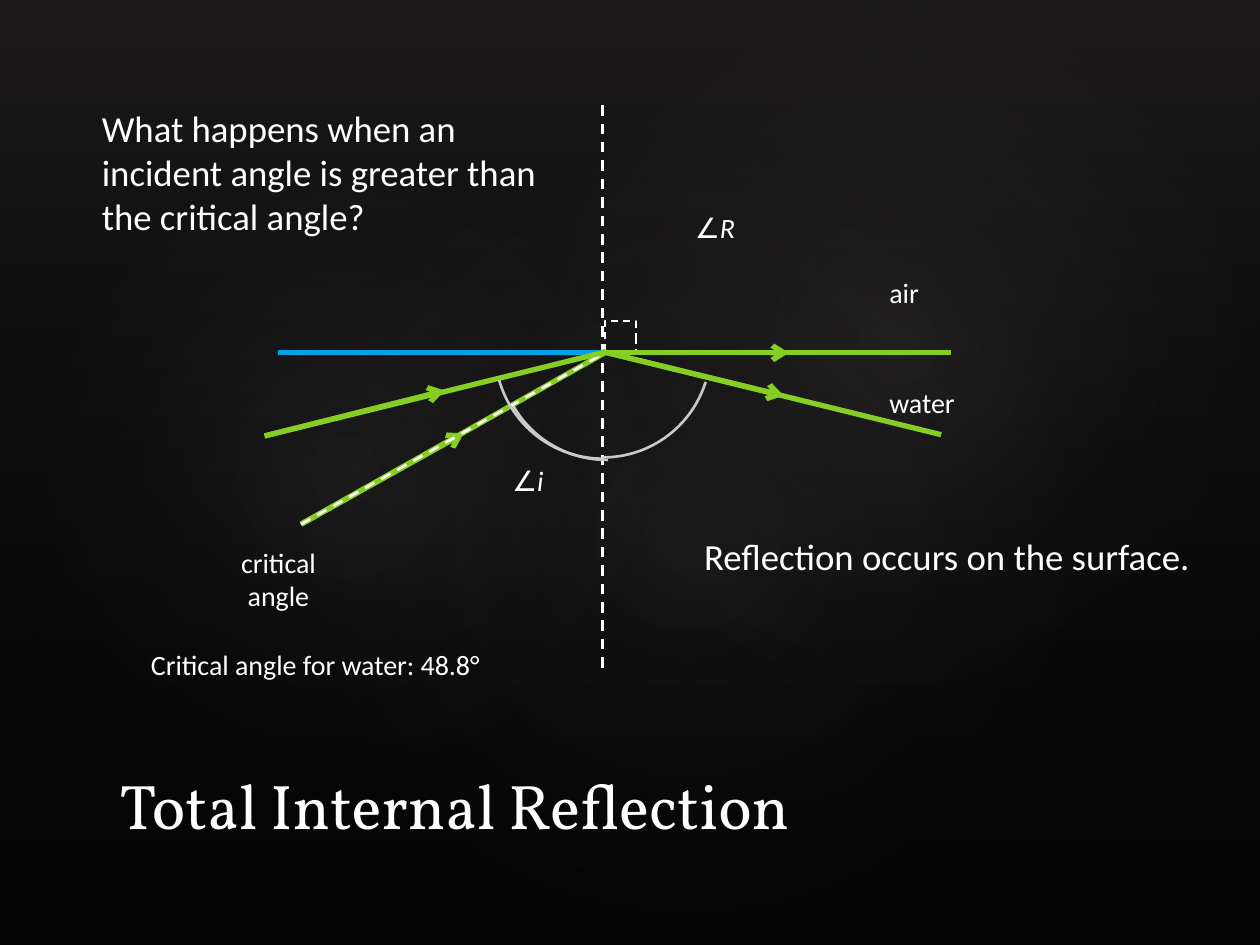
from typing import NamedTuple

from lxml.etree import SubElement
from pptx import Presentation
from pptx.dml.color import RGBColor
from pptx.enum.dml import MSO_LINE
from pptx.enum.shapes import MSO_CONNECTOR, MSO_SHAPE
from pptx.enum.text import MSO_ANCHOR, MSO_AUTO_SIZE, PP_ALIGN
from pptx.oxml.ns import qn
from pptx.util import Inches, Pt

COLUMNS, ROWS = 100, 75
CELL = Inches(0.1)
COLORS = {"back": "000000", "text": "FFFFFF", "surface": "00A2E6", "ray": "86CE24",
          "arc": "C9C9C9", "veil": "4B4545", "glow": "BFB9B9", "fade": "282828"}


class Stop(NamedTuple):
    percent: int
    color: str
    opacity: int


class Glow(NamedTuple):
    frame: tuple[float, float, float, float]
    rotation: float
    opacity: int


class Label(NamedTuple):
    frame: tuple[float, float, float, float]
    spans: tuple[str, ...]  # the second span is italic
    size: int = 16
    font: str = "Calibri"
    align: PP_ALIGN = PP_ALIGN.LEFT
    wrap: bool = True
    anchor: MSO_ANCHOR = MSO_ANCHOR.TOP
    fit: MSO_AUTO_SIZE = MSO_AUTO_SIZE.SHAPE_TO_FIT_TEXT


class Ray(NamedTuple):
    start: tuple[float, float]
    arrow: tuple[float, float]
    end: tuple[float, float]


class Arc(NamedTuple):
    left: float
    top: float
    angles: tuple[float, float]


GLOWS = [
    Glow((15, 11.4, 79.2, 62.4), 328.7, 7),
    Glow((-3, 12.8, 60.6, 49), 294.3, 8),
    Glow((35.8, 1.3, 70.9, 52), 328.7, 8),
]
CENTER = PP_ALIGN.CENTER
LABELS = [
    Label((8.5, 60.3, 82.5, 7), ("Total Internal Reflection",), 36, "Vollkorn",
          anchor=MSO_ANCHOR.BOTTOM, fit=MSO_AUTO_SIZE.NONE),
    Label((69.6, 30.1, 9.4, 3.7), ("water",)),
    Label((69.6, 21.4, 4.4, 3.7), ("air",), wrap=False),
    Label((53.6, 16.2, 6.3, 3.7), ("∠", "R"), align=CENTER),
    Label((39.3, 36.3, 5.2, 3.7), ("∠", "i"), align=CENTER, wrap=False),
    Label((7.1, 7.9, 37.4, 11.6),
          ("What happens when an incident angle is greater than the critical angle?",), 21),
    Label((17.4, 42.8, 9.4, 6.4), ("critical angle",), align=CENTER),
    Label((54.9, 41.9, 41.1, 4.5), ("Reflection occurs on the surface.",), 21, wrap=False),
    Label((11, 50.9, 28.6, 3.7), ("Critical angle for water: 48.8°",), wrap=False),
]
ORIGIN = (47.8, 28)
REFRACTED = Ray(ORIGIN, (62.6, 28), (75.5, 28))
CRITICAL = Ray((23.9, 41.6), (36.8, 34.4), (48, 28))
INCIDENT = Ray((21, 34.6), (35.3, 31), ORIGIN)
REFLECTED = Ray((47.8, 27.9), (62.2, 31.4), (74.7, 34.5))
ARC_SIZE = 17.1
CRITICAL_ARC = Arc(39.6, 19.4, (107.64, 144.11))
INCIDENT_ARC = Arc(39.3, 19.3, (107.64, 152.6))
REFLECTED_ARC = Arc(39.3, 19.2, (64.46, 107.83))


def rgb(name: str) -> RGBColor:
    return RGBColor.from_string(COLORS[name])


def cells(values) -> list[int]:
    return [round(value * CELL) for value in values]


def style_line(line, color: str, width: float, dashed: bool = False) -> None:
    line.color.rgb = rgb(color)
    line.width = Pt(width)
    if dashed:
        line.dash_style = MSO_LINE.DASH


def fill_gradient(shape, stops: list[Stop], radial: bool) -> None:
    """Fill with translucent stops, which need direct XML."""
    shape.fill.gradient()
    gradient = shape.element.spPr.find(qn("a:gradFill"))
    for child in list(gradient):
        gradient.remove(child)
    stop_list = SubElement(gradient, qn("a:gsLst"))
    for stop in stops:
        mark = SubElement(stop_list, qn("a:gs"), pos=str(stop.percent * 1000))
        color = SubElement(mark, qn("a:srgbClr"), val=COLORS[stop.color])
        SubElement(color, qn("a:alpha"), val=str(stop.opacity * 1000))
    if radial:
        shade = SubElement(gradient, qn("a:path"), path="circle")
        SubElement(shade, qn("a:fillToRect"), l="50000", t="50000", r="50000", b="50000")
    else:
        SubElement(gradient, qn("a:lin"), ang="5400000", scaled="0")


def add_shade(page, kind, frame, rotation: float, stops: list[Stop], radial: bool) -> None:
    shape = page.shapes.add_shape(kind, *cells(frame))
    shape.shadow.inherit = False
    shape.rotation = rotation
    shape.line.fill.background()
    fill_gradient(shape, stops, radial)


def add_outline(page, kind, frame, color: str, width: float, dashed: bool = False):
    """Add an unfilled shape turned a quarter to the left."""
    shape = page.shapes.add_shape(kind, *cells(frame))
    shape.shadow.inherit = False
    shape.rotation = 270
    shape.fill.background()
    style_line(shape.line, color, width, dashed)
    return shape


def add_arc(page, arc: Arc) -> None:
    frame = (arc.left, arc.top, ARC_SIZE, ARC_SIZE)
    shape = add_outline(page, MSO_SHAPE.ARC, frame, "arc", 1.5)
    for index, angle in enumerate(arc.angles):
        shape.adjustments[index] = angle


def add_line(page, start, end, color: str, width: float, dashed: bool = False,
             arrow: bool = False) -> None:
    line = page.shapes.add_connector(MSO_CONNECTOR.STRAIGHT, *cells(start + end))
    style_line(line.line, color, width, dashed)
    if arrow:
        SubElement(line.line._get_or_add_ln(), qn("a:tailEnd"), type="arrow")
    SubElement(line.element.spPr, qn("a:effectLst"))


def add_ray(page, ray: Ray) -> None:
    add_line(page, ray.start, ray.end, "ray", 3)
    add_line(page, ray.start, ray.arrow, "ray", 3, arrow=True)


def add_label(page, label: Label) -> None:
    box = page.shapes.add_textbox(*cells(label.frame))
    settings = {"word_wrap": label.wrap, "auto_size": label.fit,
                "vertical_anchor": label.anchor}
    for name, value in settings.items():
        setattr(box.text_frame, name, value)
    para = box.text_frame.paragraphs[0]
    para.alignment = label.align
    for index, text in enumerate(label.spans):
        span = para.add_run()
        span.text = text
        span.font.color.rgb = rgb("text")
        formats = {"size": Pt(label.size), "name": label.font, "italic": index == 1}
        for name, value in formats.items():
            setattr(span.font, name, value)


def main() -> None:
    deck = Presentation()
    deck.slide_width, deck.slide_height = cells((COLUMNS, ROWS))
    page = deck.slides.add_slide(deck.slide_layouts[6])
    page.background.fill.solid()
    page.background.fill.fore_color.rgb = rgb("back")

    add_shade(page, MSO_SHAPE.RECTANGLE, (0, 0, COLUMNS, ROWS), 0,
              [Stop(0, "veil", 36), Stop(100, "fade", 10)], radial=False)
    for glow in GLOWS:
        add_shade(page, MSO_SHAPE.OVAL, glow.frame, glow.rotation,
                  [Stop(0, "glow", glow.opacity), Stop(58, "fade", 0)], radial=True)

    add_outline(page, MSO_SHAPE.RECTANGLE, (48, 25.5, 2.5, 2.5), "text", 1, dashed=True)
    add_line(page, (47.8, 53), (47.8, 8.1), "text", 1.5, dashed=True)
    for label in LABELS:
        add_label(page, label)

    add_line(page, (22.1, 28), (74.3, 28), "surface", 3)
    for ray in (REFRACTED, CRITICAL):
        add_ray(page, ray)
    add_arc(page, CRITICAL_ARC)
    add_line(page, CRITICAL.start, CRITICAL.end, "text", 1.5, dashed=True)
    for ray in (INCIDENT, REFLECTED):
        add_ray(page, ray)
    for arc in (INCIDENT_ARC, REFLECTED_ARC):
        add_arc(page, arc)
    deck.save("out.pptx")


if __name__ == "__main__":
    main()
